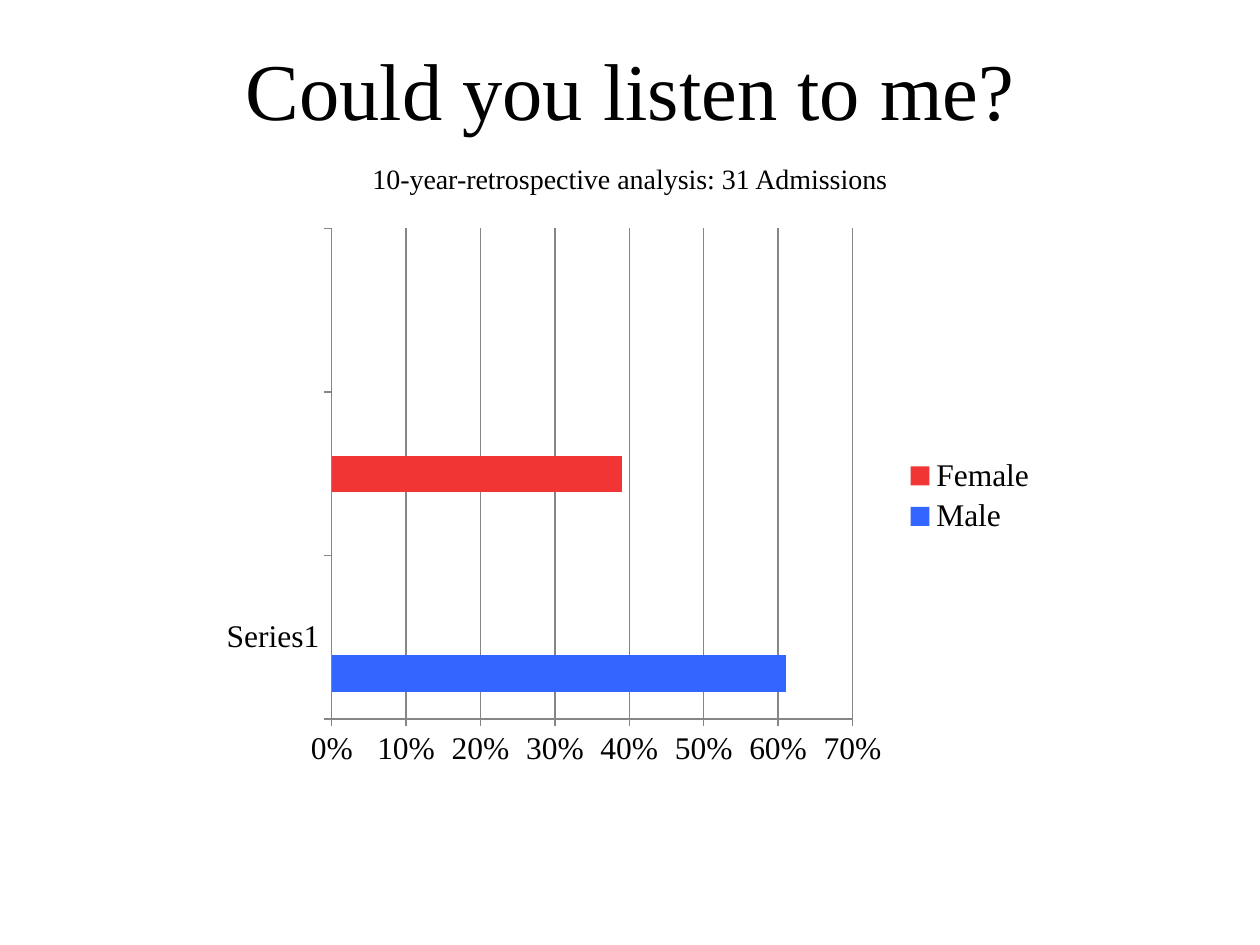
import pptx
import pptx.chart.data
import pptx.dml.color
import pptx.enum.chart
import pptx.enum.text
import pptx.oxml
import pptx.util

W, H = pptx.util.Inches(10), pptx.util.Inches(7.5)
FONT = "Times New Roman"
COLORS = {"text": "000000", "axis": "868686", "male": "3366FF",
          "female": "F13535", "spare": "7A500A"}
NS = 'xmlns:c="http://schemas.openxmlformats.org/drawingml/2006/chart"'


def rgb(name):
    return pptx.dml.color.RGBColor.from_string(COLORS[name])


def share(x, y, w, h):
    """Turn shares of the slide into a box in EMU."""
    return int(x * W), int(y * H), int(w * W), int(h * H)


def style_font(font, size):
    for key, value in {"name": FONT, "size": pptx.util.Pt(size), "bold": False}.items():
        setattr(font, key, value)
    font.color.rgb = rgb("text")


def add_line_of_text(s, box, text, size):
    tf = s.shapes.add_textbox(*box).text_frame
    tf.word_wrap = True
    tf.vertical_anchor = pptx.enum.text.MSO_ANCHOR.MIDDLE
    p = tf.paragraphs[0]
    p.alignment = pptx.enum.text.PP_ALIGN.CENTER
    r = p.add_run()
    r.text = text
    style_font(r.font, size)


def add_heading(s, box):
    """Stack the title over the subtitle in a 2:1 split."""
    x, y, w, h = box
    split = h * 2 // 3
    add_line_of_text(s, (x, y, w, split), "Could you listen to me?", 46)
    add_line_of_text(s, (x, y + split, w, h - split),
                     "10-year-retrospective analysis: 31 Admissions", 16)


def style_axis(axis):
    axis.major_tick_mark = pptx.enum.chart.XL_TICK_MARK.OUTSIDE
    axis.minor_tick_mark = pptx.enum.chart.XL_TICK_MARK.NONE
    axis.format.line.color.rgb = rgb("axis")
    axis.format.line.width = pptx.util.Pt(0.75)


def set_plot_layout(chart, **shares):
    """Fix the inner plot area as shares of the chart."""
    modes = '<c:xMode val="edge"/><c:yMode val="edge"/>'
    sizes = "".join(f'<c:{k} val="{v}"/>' for k, v in shares.items())
    layout = pptx.oxml.parse_xml(
        f'<c:layout {NS}><c:manualLayout><c:layoutTarget val="inner"/>'
        f'{modes}{sizes}</c:manualLayout></c:layout>')
    area = chart._chartSpace.chart.plotArea
    for old in area.findall(layout.tag):
        area.remove(old)
    area.insert(0, layout)


def hide_legend_entry(chart, index):
    entry = pptx.oxml.parse_xml(
        f'<c:legendEntry {NS}><c:idx val="{index}"/><c:delete val="1"/></c:legendEntry>')
    chart.legend._element.insert(1, entry)


def add_admissions_chart(s, box):
    data = pptx.chart.data.CategoryChartData(number_format="0%")
    data.categories = ["Series1", "", ""]
    data.add_series("Male", (0.61, None, None))
    data.add_series("Female", (None, 0.39, None))
    data.add_series("Column1", (None, None, None))
    chart = s.shapes.add_chart(
        pptx.enum.chart.XL_CHART_TYPE.BAR_CLUSTERED, *box, data).chart
    chart.has_title = False
    style_font(chart.font, 18)

    plot = chart.plots[0]
    plot.gap_width = 150
    plot.vary_by_categories = False
    for series, color in zip(plot.series, ("male", "female", "spare")):
        series.format.fill.solid()
        series.format.fill.fore_color.rgb = rgb(color)

    values = chart.value_axis
    for axis in (chart.category_axis, values):
        style_axis(axis)
    for key, value in {"minimum_scale": 0, "maximum_scale": 0.7, "major_unit": 0.1,
                       "has_major_gridlines": True}.items():
        setattr(values, key, value)
    values.major_gridlines.format.line.color.rgb = rgb("axis")
    values.tick_labels.number_format = "0%"
    values.tick_labels.number_format_is_linked = False

    chart.has_legend = True
    chart.legend.position = pptx.enum.chart.XL_LEGEND_POSITION.RIGHT
    chart.legend.include_in_layout = False
    hide_legend_entry(chart, 0)
    set_plot_layout(chart, x=0.145, y=0.02, w=0.62, h=0.88)


def main():
    prs = pptx.Presentation()
    prs.slide_width, prs.slide_height = W, H
    s = prs.slides.add_slide(prs.slide_layouts[6])
    add_heading(s, share(0.1, 0.03, 0.8, 0.19))
    add_admissions_chart(s, share(1 / 6, 0.23, 2 / 3, 0.59))
    prs.save("out.pptx")


if __name__ == "__main__":
    main()
